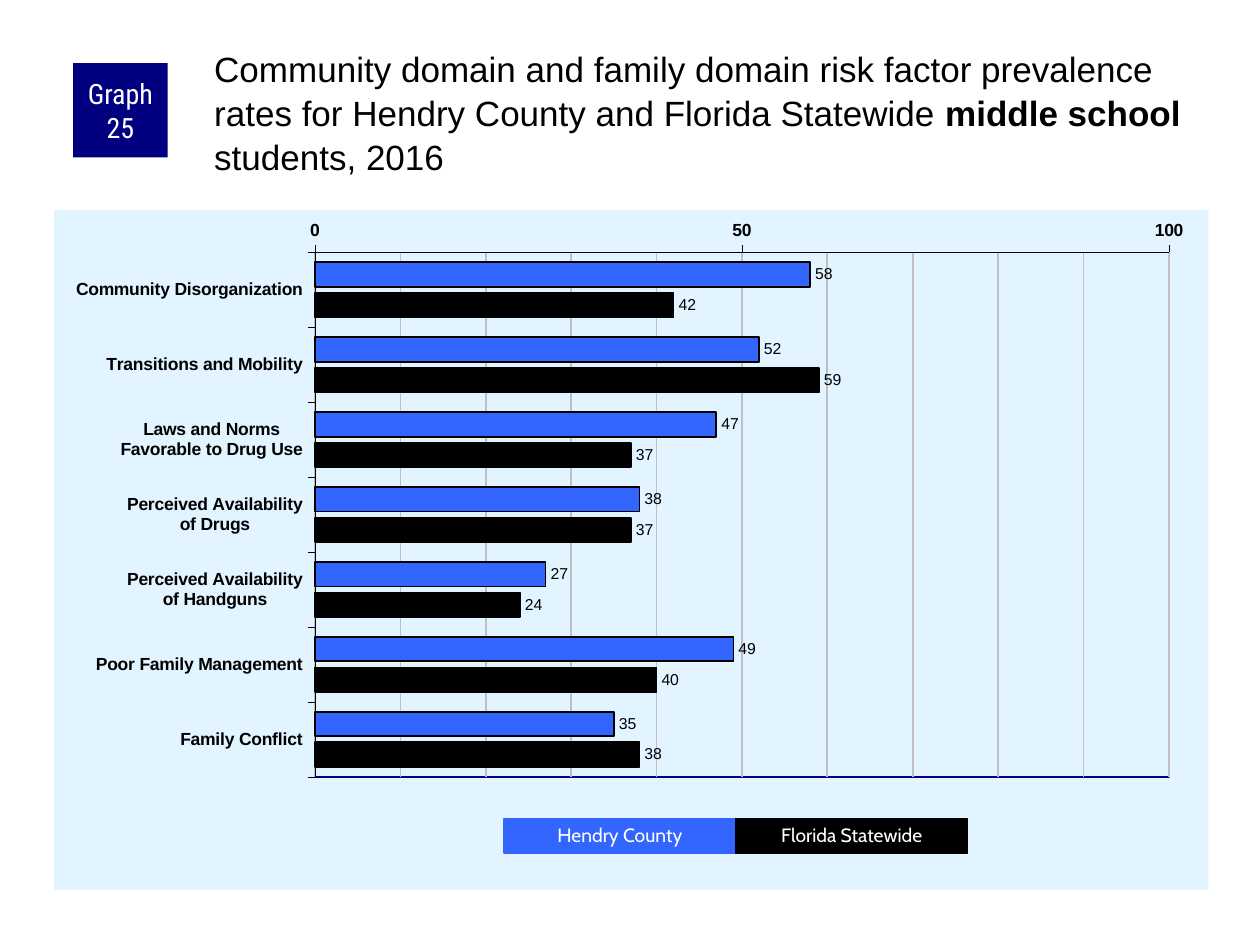
from copy import deepcopy

from lxml import etree
from pptx import Presentation
from pptx.chart.data import CategoryChartData
from pptx.dml.color import RGBColor
from pptx.enum.chart import XL_AXIS_CROSSES, XL_CHART_TYPE, XL_LABEL_POSITION, XL_TICK_MARK
from pptx.enum.shapes import MSO_SHAPE
from pptx.enum.text import MSO_ANCHOR, PP_ALIGN
from pptx.oxml import parse_xml
from pptx.oxml.ns import nsdecls, qn
from pptx.util import Inches, Pt

BLACK = RGBColor(0x00, 0x00, 0x00)
WHITE = RGBColor(0xFF, 0xFF, 0xFF)
NAVY = RGBColor(0x00, 0x00, 0x80)
BLUE = RGBColor(0x33, 0x66, 0xFF)
GREY = RGBColor(0xC0, 0xC0, 0xC0)
PALE_BLUE = RGBColor(0xE1, 0xF4, 0xFF)

BAR_CLUSTERED = XL_CHART_TYPE.BAR_CLUSTERED
OUTSIDE_END = XL_LABEL_POSITION.OUTSIDE_END
CROSS_MAXIMUM = XL_AXIS_CROSSES.MAXIMUM
TICK_OUTSIDE, TICK_NONE = XL_TICK_MARK.OUTSIDE, XL_TICK_MARK.NONE
RECTANGLE = MSO_SHAPE.RECTANGLE
TOP, MIDDLE = MSO_ANCHOR.TOP, MSO_ANCHOR.MIDDLE
LEFT, CENTER = PP_ALIGN.LEFT, PP_ALIGN.CENTER

TITLE_RUNS = [
    ("Community domain and family domain risk factor prevalence rates "
     "for Hendry County and Florida Statewide ", False),
    ("middle school", True),
    (" students, 2016", False),
]
RISK_FACTORS = [
    "Community Disorganization",
    "Transitions and Mobility",
    "Laws and Norms\nFavorable to Drug Use",
    "Perceived Availability\nof Drugs",
    "Perceived Availability\nof Handguns",
    "Poor Family Management",
    "Family Conflict",
]
REGIONS = [
    ("Hendry County", BLUE, (58, 52, 47, 38, 27, 49, 35)),
    ("Florida Statewide", BLACK, (42, 59, 37, 37, 24, 40, 38)),
]
PLOT_LAYOUT = {"x": 0.226, "y": 0.062, "w": 0.74, "h": 0.772}
LEGEND_LEFT, LEGEND_TOP, LEGEND_WIDTH, LEGEND_HEIGHT = 4, 6.5, 1.84, 0.27


def style_font(font, name, size, color, bold=False):
    font.name, font.size, font.bold = name, Pt(size), bold
    font.color.rgb = color


def style_line(line, color, width):
    line.color.rgb = color
    line.width = Pt(width)


def add_title(slide):
    title = slide.shapes.title
    title.left, title.top = Inches(1.67), Inches(0.33)
    title.width, title.height = Inches(7.92), Inches(0.83)
    frame = title.text_frame
    frame.word_wrap = True
    frame.vertical_anchor = TOP
    frame.margin_left = frame.margin_top = Inches(0.03)
    frame.margin_right = frame.margin_bottom = 0
    paragraph = frame.paragraphs[0]
    paragraph.alignment = LEFT
    paragraph.line_spacing = 1.05
    for text, bold in TITLE_RUNS:
        run = paragraph.add_run()
        run.text = text
        style_font(run.font, "Arial", 20, BLACK, bold)


def add_box(slide, text, bounds, color, font_name, font_size):
    """Add a filled rectangle with centred white text."""
    box = slide.shapes.add_shape(RECTANGLE, *map(Inches, bounds))
    box.shadow.inherit = False
    box.fill.solid()
    box.fill.fore_color.rgb = color
    box.line.fill.background()
    frame = box.text_frame
    frame.text = text
    frame.word_wrap = True
    frame.vertical_anchor = MIDDLE
    frame.margin_left = frame.margin_right = Inches(0.05)
    frame.margin_top = frame.margin_bottom = 0
    paragraph = frame.paragraphs[0]
    paragraph.alignment = CENTER
    style_font(paragraph.runs[0].font, font_name, font_size, WHITE)
    return box


def add_legend(slide):
    for index, (region, color, _) in enumerate(REGIONS):
        bounds = (LEGEND_LEFT + index * LEGEND_WIDTH, LEGEND_TOP,
                  LEGEND_WIDTH, LEGEND_HEIGHT)
        key = add_box(slide, region, bounds, color, "Cabin", 11)
        style_line(key.line, color, 0.75)
        key.text_frame.paragraphs[0].line_spacing = 0.9


def style_axis(axis):
    axis.major_tick_mark, axis.minor_tick_mark = TICK_OUTSIDE, TICK_NONE
    style_font(axis.tick_labels.font, "Arial", 10, BLACK, bold=True)
    style_line(axis.format.line, BLACK, 0.25)


def style_axes(chart):
    factors, rates = chart.category_axis, chart.value_axis
    style_axis(factors)
    style_axis(rates)
    factors.reverse_order = True
    factors.crosses = CROSS_MAXIMUM
    factors.has_major_gridlines = False
    rates.minimum_scale, rates.maximum_scale = 0, 100
    rates.major_unit, rates.minor_unit = 50, 10
    rates.has_major_gridlines = rates.has_minor_gridlines = True
    style_line(rates.major_gridlines.format.line, GREY, 1)
    major_format = chart.element.find(f'.//{qn("c:majorGridlines")}/{qn("c:spPr")}')
    minor_gridlines = chart.element.find(f'.//{qn("c:minorGridlines")}')
    minor_gridlines.append(deepcopy(major_format))


def style_areas(chart):
    """Set the chart background, the plot border and the inner plot position."""
    space = chart.element
    space.find(qn("c:chart")).addnext(parse_xml(
        f'<c:spPr {nsdecls("c", "a")}><a:solidFill><a:srgbClr val="{PALE_BLUE}"/>'
        '</a:solidFill><a:ln><a:noFill/></a:ln></c:spPr>'))
    plot_area = space.find(".//" + qn("c:plotArea"))
    plot_area.append(parse_xml(
        f'<c:spPr {nsdecls("c", "a")}><a:noFill/><a:ln w="{Pt(1)}"><a:solidFill>'
        f'<a:srgbClr val="{NAVY}"/></a:solidFill></a:ln></c:spPr>'))
    for automatic_layout in plot_area.findall(qn("c:layout")):
        plot_area.remove(automatic_layout)
    layout = parse_xml(f'<c:layout {nsdecls("c")}><c:manualLayout/></c:layout>')
    settings = {"layoutTarget": "inner", "xMode": "edge", "yMode": "edge", **PLOT_LAYOUT}
    for tag, value in settings.items():
        etree.SubElement(layout[0], qn(f"c:{tag}")).set("val", str(value))
    plot_area.insert(0, layout)


def add_prevalence_chart(slide):
    data = CategoryChartData()
    data.categories = RISK_FACTORS
    for region, _, rates in REGIONS:
        data.add_series(region, rates)
    bounds = map(Inches, (0.43, 1.67, 9.16, 5.39))
    chart = slide.shapes.add_chart(BAR_CLUSTERED, *bounds, data).chart
    chart.has_legend = chart.has_title = False
    style_font(chart.font, "Arial", 11.8, BLACK)
    plot = chart.plots[0]
    plot.gap_width, plot.overlap = 80, -25
    plot.vary_by_categories = False
    for series, (_, color, _) in zip(plot.series, REGIONS):
        series.invert_if_negative = False
        series.format.fill.solid()
        series.format.fill.fore_color.rgb = color
        style_line(series.format.line, BLACK, 1)
        labels = series.data_labels
        labels.show_value = True
        labels.position = OUTSIDE_END
        style_font(labels.font, "Arial", 9, BLACK)
    style_axes(chart)
    style_areas(chart)


def main():
    presentation = Presentation()
    presentation.slide_width, presentation.slide_height = Inches(10), Inches(7.5)
    slide = presentation.slides.add_slide(presentation.slide_layouts[5])
    add_prevalence_chart(slide)
    add_box(slide, "Graph 25", (0.58, 0.5, 0.75, 0.75), NAVY, "Roboto Condensed", 16)
    add_title(slide)
    add_legend(slide)
    presentation.save("out.pptx")


if __name__ == "__main__":
    main()
